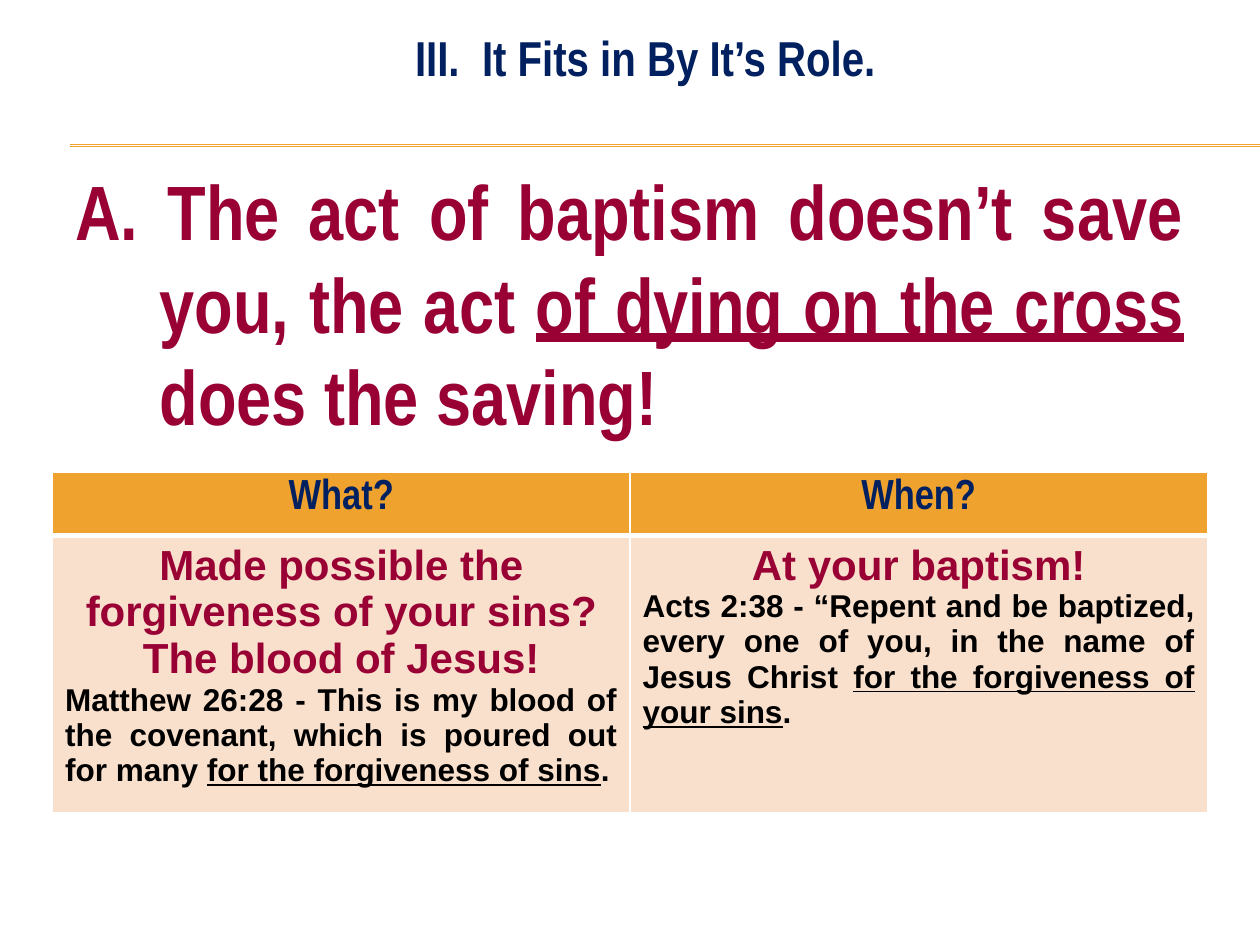
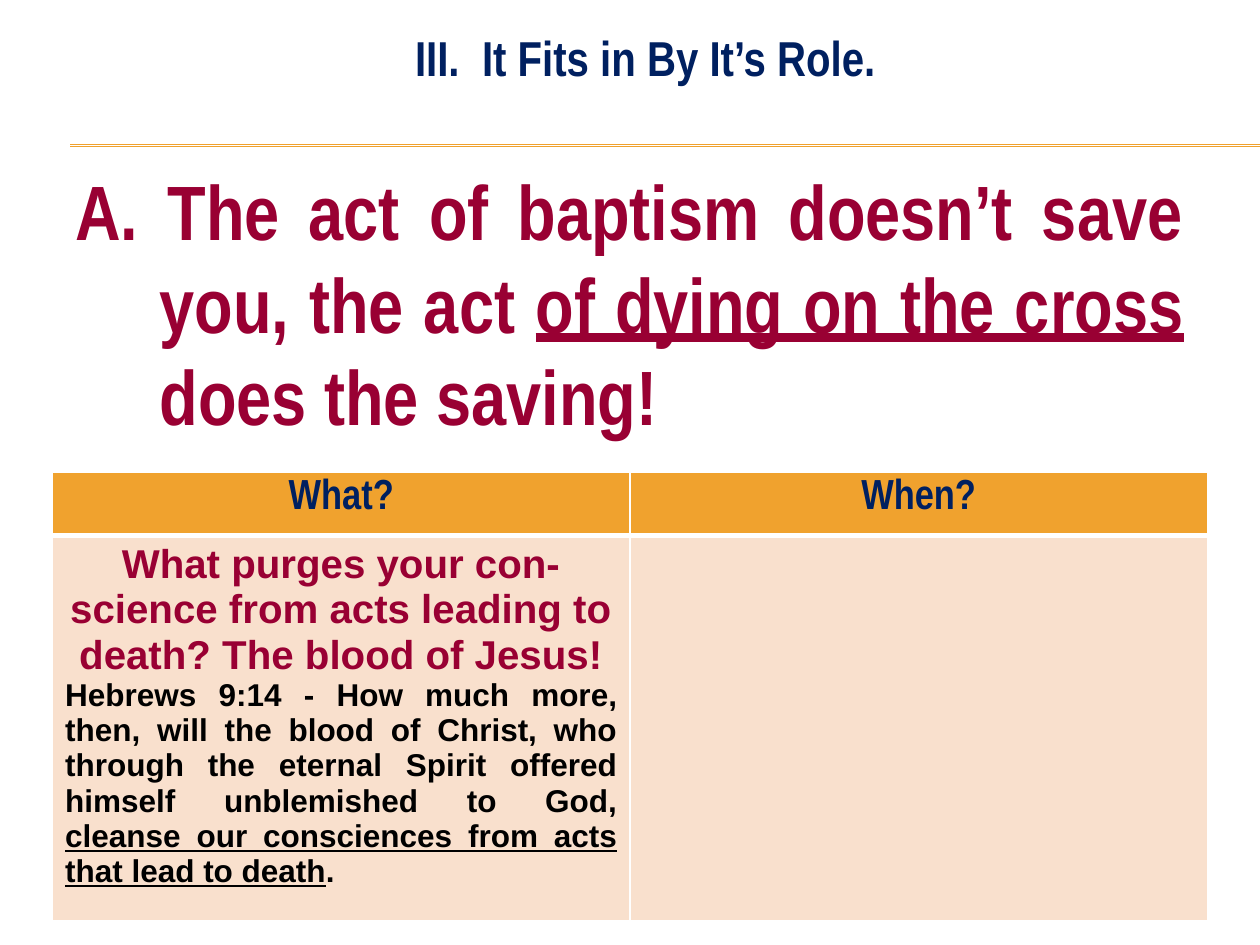
from lxml.etree import SubElement
from pptx import Presentation
from pptx.dml.color import RGBColor
from pptx.enum.shapes import MSO_CONNECTOR
from pptx.enum.text import PP_ALIGN
from pptx.oxml.ns import qn
from pptx.util import Cm, Pt

COLORS = {"navy": "002060", "crimson": "990033", "amber": "F0A22E",
          "peach": "F9E0CD", "black": "000000", "white": "FFFFFF"}
NARROW, REGULAR = "Arial Narrow", "Arial"

TITLE = "III.  It Fits in By It’s Role."
# A passage is (plain lead, underlined phrase, plain ending).
THESIS = ("A. The act of baptism doesn’t save you, the act ",
          "of dying on the cross", " does the saving!")
HEADINGS = ("What?", "When?")
# Each answer is (claim, claim size, passage); None leaves the cell empty.
SLIDES = [
    {"answer_height": 5.59, "answers": [
        ("Made possible the forgiveness of your sins? The blood of Jesus!", 24,
         ("Matthew 26:28 - This is my blood of the covenant, which is poured out for many ",
          "for the forgiveness of sins", ".")),
        ("At your baptism!", 24,
         ("Acts 2:38 - “Repent and be baptized, every one of you, in the name of Jesus Christ ",
          "for the forgiveness of your sins", ".")),
    ]},
    {"answer_height": 7.75, "answers": [
        ("What purges your con-science from acts leading to death? The blood of Jesus!", 23,
         ("Hebrews 9:14 - How much more, then, will the blood of Christ, who through "
          "the eternal Spirit offered himself unblemished to God, ",
          "cleanse our consciences from acts that lead to death", ".")),
        None,
    ]},
]

SLIDE_WIDTH, SLIDE_HEIGHT = 25.4, 19.05
RULE_LEFT, RULE_TOPS = 1.42, (2.92, 2.95)
TITLE_BOX = (2.11, 0.43, 21.79, 1.45)
THESIS_BOX = (1.27, 3.18, 22.86, 15.04)
THESIS_INDENT = 1.7
TABLE_LEFT, TABLE_TOP, TABLE_WIDTH = 1.06, 9.53, 23.28
HEADING_HEIGHT = 1.25


def rgb(color):
    return RGBColor.from_string(COLORS[color])


def style(paragraph, size, font, color, alignment):
    paragraph.alignment = alignment
    paragraph.font.size = Pt(size)
    paragraph.font.name = font
    paragraph.font.bold = True
    paragraph.font.color.rgb = rgb(color)


def write_passage(paragraph, passage):
    """Write the three parts of a passage, underlining the middle one."""
    for part, underlined in zip(passage, (False, True, False)):
        run = paragraph.add_run()
        run.text = part
        run.font.underline = underlined


def add_text_area(slide, box):
    frame = slide.shapes.add_textbox(*map(Cm, box)).text_frame
    frame.word_wrap = True
    return frame.paragraphs[0]


def add_rule(slide, top):
    rule = slide.shapes.add_connector(
        MSO_CONNECTOR.STRAIGHT, Cm(RULE_LEFT), Cm(top), Cm(SLIDE_WIDTH), Cm(top))
    rule.line.color.rgb = rgb("amber")
    rule.line.width = Pt(0.75)
    SubElement(rule._element.spPr, qn("a:effectLst"))


def paint_cell(cell, fill, **border_widths):
    """Give a cell white borders (1 pt unless a side is named) and a fill."""
    properties = cell._tc.get_or_add_tcPr()
    for side in "LRTB":
        border = SubElement(properties, qn(f"a:ln{side}"),
                            w=str(Pt(border_widths.get(side, 1))))
        solid = SubElement(border, qn("a:solidFill"))
        SubElement(solid, qn("a:srgbClr"), val=COLORS["white"])
    cell.fill.solid()
    cell.fill.fore_color.rgb = rgb(fill)


def add_answer_table(slide, answers, answer_height):
    table = slide.shapes.add_table(
        2, len(HEADINGS), Cm(TABLE_LEFT), Cm(TABLE_TOP), Cm(TABLE_WIDTH),
        Cm(HEADING_HEIGHT + answer_height)).table
    table.horz_banding = False
    table.rows[0].height = Cm(HEADING_HEIGHT)
    table.rows[1].height = Cm(answer_height)

    for column, (heading, answer) in enumerate(zip(HEADINGS, answers)):
        heading_cell, answer_cell = table.cell(0, column), table.cell(1, column)
        paint_cell(heading_cell, "amber", B=3)
        paint_cell(answer_cell, "peach", T=3)
        heading_cell.text = heading
        style(heading_cell.text_frame.paragraphs[0], 24, NARROW, "navy", PP_ALIGN.CENTER)
        if answer is None:
            continue
        claim, claim_size, verse = answer
        answer_cell.text = claim
        style(answer_cell.text_frame.paragraphs[0], claim_size, REGULAR,
              "crimson", PP_ALIGN.CENTER)
        verse_paragraph = answer_cell.text_frame.add_paragraph()
        style(verse_paragraph, 18, REGULAR, "black", PP_ALIGN.JUSTIFY)
        write_passage(verse_paragraph, verse)


def add_role_slide(deck, answers, answer_height):
    slide = deck.slides.add_slide(deck.slide_layouts[6])
    for top in RULE_TOPS:
        add_rule(slide, top)

    thesis = add_text_area(slide, THESIS_BOX)
    style(thesis, 44, NARROW, "crimson", PP_ALIGN.JUSTIFY)
    indents = thesis._p.get_or_add_pPr()
    indents.set("marL", str(Cm(THESIS_INDENT)))
    indents.set("indent", str(-Cm(THESIS_INDENT)))
    write_passage(thesis, THESIS)

    title = add_text_area(slide, TITLE_BOX)
    title.text = TITLE
    style(title, 28, NARROW, "navy", PP_ALIGN.CENTER)

    add_answer_table(slide, answers, answer_height)


def main():
    deck = Presentation()
    deck.slide_width, deck.slide_height = Cm(SLIDE_WIDTH), Cm(SLIDE_HEIGHT)
    for content in SLIDES:
        add_role_slide(deck, **content)
    deck.save("out.pptx")


if __name__ == "__main__":
    main()
